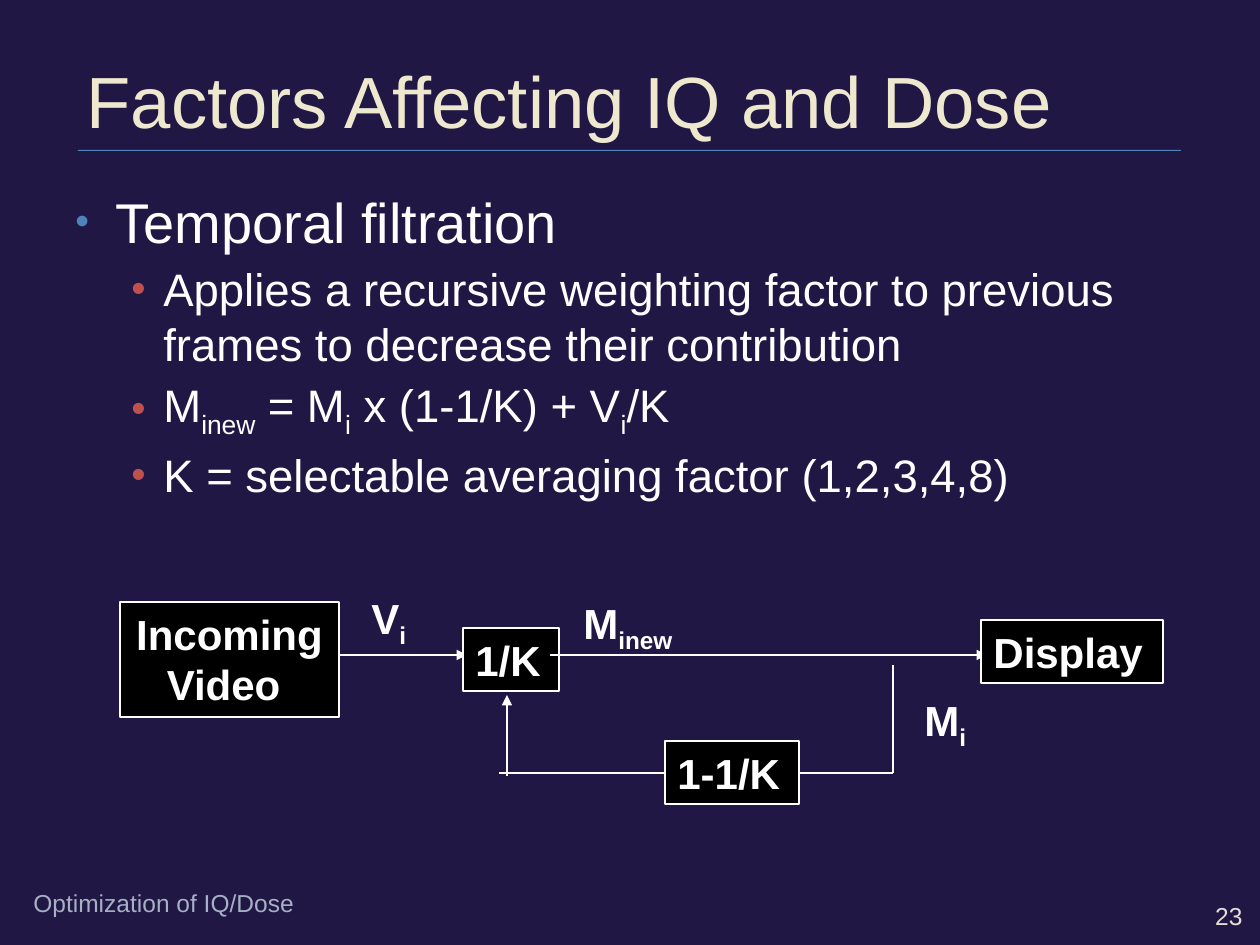
from lxml import etree
from pptx import Presentation
from pptx.dml.color import RGBColor
from pptx.enum.dml import MSO_LINE
from pptx.enum.shapes import MSO_CONNECTOR, MSO_SHAPE
from pptx.enum.text import MSO_ANCHOR, MSO_AUTO_SIZE, PP_ALIGN
from pptx.oxml.ns import qn
from pptx.util import Pt

RECTANGLE = MSO_SHAPE.RECTANGLE
STRAIGHT = MSO_CONNECTOR.STRAIGHT
SOLID = MSO_LINE.SOLID
TOP, MIDDLE, BOTTOM = MSO_ANCHOR.TOP, MSO_ANCHOR.MIDDLE, MSO_ANCHOR.BOTTOM
LEFT, CENTER, RIGHT = PP_ALIGN.LEFT, PP_ALIGN.CENTER, PP_ALIGN.RIGHT
NO_AUTOFIT = MSO_AUTO_SIZE.NONE

PX = 914400 / 126
COLORS = {
    "background": "201745",
    "rule": "4F81BD",
    "title": "EDE8CE",
    "text": "FFFFFF",
    "sub_bullet": "C0504D",
    "footer": "A7AFC5",
    "number": "E3E1D7",
    "box": "000000",
}


def px(*lengths):
    """Turn px lengths into a list of EMU."""
    return [round(length * PX) for length in lengths]


def write(shape, paragraphs, color, size, bold=False, align=LEFT, anchor=TOP):
    """Fill a shape with paragraphs; every second run of one is a subscript."""
    frame = shape.text_frame
    frame_format = {"word_wrap": True, "auto_size": NO_AUTOFIT, "vertical_anchor": anchor}
    for name, value in frame_format.items():
        setattr(frame, name, value)
    font_format = {"name": "Arial", "size": Pt(size), "bold": bold}
    for index, runs in enumerate(paragraphs):
        paragraph = frame.add_paragraph() if index else frame.paragraphs[0]
        paragraph.alignment = align
        for position, text in enumerate(runs):
            run = paragraph.add_run()
            run.text = text
            for name, value in font_format.items():
                setattr(run.font, name, value)
            run.font.color.rgb = RGBColor.from_string(COLORS[color])
            if position % 2:
                run._r.get_or_add_rPr().set("baseline", "-25000")


presentation = Presentation()
presentation.slide_width, presentation.slide_height = px(1260, 945)
slide = presentation.slides.add_slide(presentation.slide_layouts[5])
slide.background.fill.solid()
slide.background.fill.fore_color.rgb = RGBColor.from_string(COLORS["background"])
shapes = slide.shapes

# Title and the rule below it
title = shapes.title
title.left, title.top, title.width, title.height = px(66, 40, 1134, 109)
write(title, [["Factors Affecting IQ and Dose"]], "title", 41.4, anchor=BOTTOM)
title.text_frame.paragraphs[0]._p.get_or_add_pPr().set("marL", str(px(8)[0]))

rule = shapes.add_shape(RECTANGLE, *px(78, 150, 1103, 1))
rule.shadow.inherit = False
rule.fill.solid()
rule.fill.fore_color.rgb = RGBColor.from_string(COLORS["rule"])
rule.line.fill.background()

# Bulleted text
body = shapes.add_textbox(*px(63, 181, 1134, 678))
write(body, [
    ["Temporal filtration"],
    ["Applies a recursive weighting factor to previous frames to decrease their contribution"],
    ["M", "inew", " = M", "i", " x (1-1/K) + V", "i", "/K"],
    ["K = selectable averaging factor (1,2,3,4,8)"],
], "text", 26)
for index, paragraph in enumerate(body.text_frame.paragraphs):
    if index == 0:
        margin, indent, bullet_color, bullet_size = 40, -40, "rule", 70
        paragraph.runs[0].font.size = Pt(32)
    else:
        margin, indent, bullet_color, bullet_size = 88, -32, "sub_bullet", 90
        paragraph.level = 1
        paragraph.space_before = Pt(4)
    properties = paragraph._p.get_or_add_pPr()
    for name, value in zip(("marL", "indent"), px(margin, indent)):
        properties.set(name, str(value))
    color_element = etree.SubElement(properties, qn("a:buClr"))
    etree.SubElement(color_element, qn("a:srgbClr"), val=COLORS[bullet_color])
    etree.SubElement(properties, qn("a:buSzPct"), val=str(bullet_size * 1000))
    etree.SubElement(properties, qn("a:buFont"), typeface="Arial")
    etree.SubElement(properties, qn("a:buChar"), char="•")

# Footer and slide number
footer = shapes.add_textbox(*px(21, 882, 581, 38))
write(footer, [["Optimization of IQ/Dose"]], "footer", 14)
number = shapes.add_textbox(*px(1191, 897, 64, 38))
write(number, [["23"]], "number", 14, align=RIGHT, anchor=MIDDLE)

# Signal flow, from back to front: lines, boxes and labels
flow = [
    ("arrow", (336, 655, 467, 655), None),
    ("label", (359, 586, 63, 63), [["V", "i"]]),
    ("box", (463, 628, 96, 63), [["1/K"]]),
    ("arrow", (550, 655, 987, 655), None),
    ("arrow", (507, 776, 507, 695), None),
    ("line", (499, 773, 893, 773), None),
    ("label", (571, 591, 125, 63), [["M", "inew"]]),
    ("line", (893, 665, 893, 773), None),
    ("label", (912, 688, 86, 63), [["M", "i"]]),
    ("box", (665, 741, 134, 63), [["1-1/K"]]),
    ("box", (981, 620, 182, 63), [["Display"]]),
    ("box", (120, 602, 219, 115), [["Incoming"], ["Video "]]),
]
for kind, place, paragraphs in flow:
    if kind == "label":
        shape = shapes.add_textbox(*px(*place))
    elif kind == "box":
        shape = shapes.add_shape(RECTANGLE, *px(*place))
        shape.shadow.inherit = False
        shape.fill.solid()
        shape.fill.fore_color.rgb = RGBColor.from_string(COLORS["box"])
    else:
        shape = shapes.add_connector(STRAIGHT, *px(*place))

    if kind != "label":
        shape.line.color.rgb = RGBColor.from_string(COLORS["text"])
        line_format = {"width": Pt(1.5), "dash_style": SOLID}
        for name, value in line_format.items():
            setattr(shape.line, name, value)
    if kind == "arrow":
        etree.SubElement(shape.line._get_or_add_ln(), qn("a:tailEnd"), type="triangle")
    if kind in ("arrow", "line"):
        etree.SubElement(shape._element.spPr, qn("a:effectLst"))
    else:
        align = CENTER if len(paragraphs) > 1 else LEFT
        write(shape, paragraphs, "text", 24, bold=True, align=align)

presentation.save("out.pptx")
